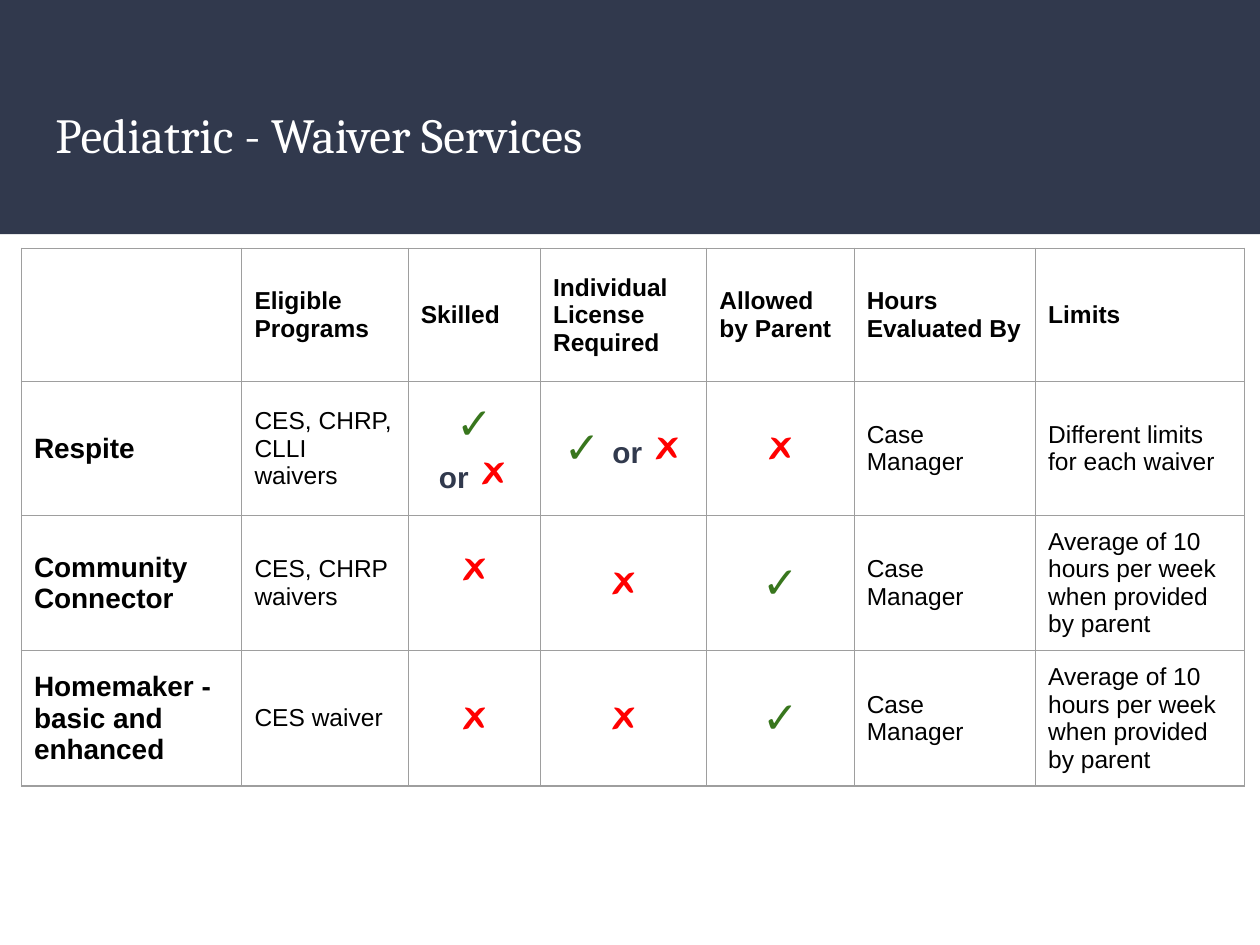
from lxml import etree
from pptx import Presentation
from pptx.dml.color import RGBColor
from pptx.enum.shapes import MSO_SHAPE
from pptx.enum.text import MSO_ANCHOR, MSO_AUTO_SIZE, PP_ALIGN
from pptx.oxml.ns import qn
from pptx.util import Inches, Pt

RECT = MSO_SHAPE.RECTANGLE
TOP, MIDDLE = MSO_ANCHOR.TOP, MSO_ANCHOR.MIDDLE
LEFT, CENTER = PP_ALIGN.LEFT, PP_ALIGN.CENTER
NO_AUTOFIT = MSO_AUTO_SIZE.NONE

NAVY = RGBColor(0x31, 0x39, 0x4D)
WHITE = RGBColor(0xFF, 0xFF, 0xFF)
BLACK = RGBColor(0, 0, 0)
GREEN = RGBColor(0x38, 0x76, 0x1D)
RED = RGBColor(0xFF, 0, 0)
GRAY = RGBColor(0x9E, 0x9E, 0x9E)

# The slide is a grid of 100 columns and 75 rows
GRID_COLS, GRID_ROWS = 100, 75
INSET = Inches(0.1)
MARGINS = {f"margin_{side}": INSET for side in ("left", "top", "right", "bottom")}

FORMATS = {
    "title": {"name": "Cambria", "size": Pt(28), "bold": False, "color": WHITE},
    "head": {"name": "Arial", "size": Pt(14), "bold": True, "color": BLACK},
    "service": {"name": "Arial", "size": Pt(16), "bold": True, "color": BLACK},
    "body": {"name": "Arial", "size": Pt(14), "bold": False, "color": BLACK},
    "yes": {"name": "Arial", "size": Pt(25), "bold": True, "color": GREEN},
    "or": {"name": "Arial", "size": Pt(17), "bold": True, "color": NAVY},
    "no": {"name": "Arial", "size": Pt(25), "bold": False, "color": RED},
}

YES = [("✓", "yes")]
NO = [("🗶", "no")]
EITHER = [("✓ ", "yes"), ("or ", "or"), ("🗶", "no")]
MANAGER = "Case Manager"
PARENT_LIMIT = "Average of 10 hours per week when provided by parent"

COL_WIDTHS = [17.5, 13.2, 10.5, 13.2, 11.7, 14.4, 16.6]
ROW_HEIGHT = 10.6
HEADERS = ["", "Eligible\nPrograms", "Skilled", "Individual License Required",
           "Allowed by Parent", "Hours Evaluated By", "Limits"]
SERVICES = [
    ["Respite", "CES, CHRP, CLLI waivers", EITHER, EITHER, NO, MANAGER,
     "Different limits for each waiver"],
    ["Community Connector", "CES, CHRP waivers", NO, NO, YES, MANAGER, PARENT_LIMIT],
    ["Homemaker - basic and enhanced", "CES waiver", NO, NO, YES, MANAGER, PARENT_LIMIT],
]


def set_attrs(target, values):
    for name, value in values.items():
        setattr(target, name, value)


class SlideBuilder:
    def __init__(self, prs):
        self.prs = prs
        self.s = prs.slides.add_slide(prs.slide_layouts[5])

    def x(self, cols):
        return round(self.prs.slide_width * cols / GRID_COLS)

    def y(self, rows):
        return round(self.prs.slide_height * rows / GRID_ROWS)

    def box(self, left, top, width, height):
        return self.x(left), self.y(top), self.x(width), self.y(height)

    def add_runs(self, p, runs, align=LEFT):
        p.alignment = align
        for text, style in runs:
            r = p.add_run()
            r.text = text
            values = dict(FORMATS[style])
            r.font.color.rgb = values.pop("color")
            set_attrs(r.font, values)

    def band(self, *place):
        """Add a plain filled bar behind everything else."""
        sp = self.s.shapes.add_shape(RECT, *self.box(*place))
        sp.shadow.inherit = False
        sp.fill.solid()
        sp.fill.fore_color.rgb = NAVY
        sp.line.fill.background()
        self.s.shapes._spTree.insert(2, sp._element)

    def title(self, text, *place):
        sp = self.s.shapes.title
        set_attrs(sp, dict(zip(("left", "top", "width", "height"), self.box(*place))))
        tf = sp.text_frame
        set_attrs(tf, {**MARGINS, "word_wrap": True, "auto_size": NO_AUTOFIT,
                       "vertical_anchor": TOP})
        self.add_runs(tf.paragraphs[0], [(text, "title")])

    def borders(self, cell):
        tc_pr = cell._tc.get_or_add_tcPr()
        for i, side in enumerate(("lnL", "lnR", "lnT", "lnB")):
            ln = etree.Element(qn(f"a:{side}"), w=str(Pt(0.75)))
            fill = etree.SubElement(ln, qn("a:solidFill"))
            etree.SubElement(fill, qn("a:srgbClr"), val=str(GRAY))
            tc_pr.insert(i, ln)

    def cell(self, cell, content, style):
        """Fill a cell with text, one paragraph a line, or with centred marks."""
        set_attrs(cell, {**MARGINS, "vertical_anchor": MIDDLE})
        cell.fill.background()
        self.borders(cell)
        tf = cell.text_frame
        if isinstance(content, list):
            self.add_runs(tf.paragraphs[0], content, CENTER)
        elif content:
            for i, line in enumerate(content.split("\n")):
                p = tf.add_paragraph() if i else tf.paragraphs[0]
                self.add_runs(p, [(line, style)])

    def table(self, left, top, rows, col_widths, row_height):
        place = self.box(left, top, sum(col_widths), row_height * len(rows))
        table = self.s.shapes.add_table(len(rows), len(col_widths), *place).table
        set_attrs(table, {"first_row": False, "horz_banding": False})
        for col, width in zip(table.columns, col_widths):
            col.width = self.x(width)
        for i, row in enumerate(rows):
            table.rows[i].height = self.y(row_height)
            for j, content in enumerate(row):
                style = "head" if i == 0 else "service" if j == 0 else "body"
                self.cell(table.cell(i, j), content, style)
        return table


def main():
    prs = Presentation()
    prs.slide_width, prs.slide_height = Inches(10), Inches(7.5)
    slide = SlideBuilder(prs)
    slide.band(0, 0, GRID_COLS, 18.6)
    slide.title("Pediatric - Waiver Services", 3.4, 7.3, 93.2, 9.1)
    table = slide.table(1.7, 19.7, [HEADERS, *SERVICES], COL_WIDTHS, ROW_HEIGHT)
    # The Community Connector mark under "Skilled" sits above the middle
    table.cell(2, 2).margin_bottom = Inches(0.32)
    prs.save("out.pptx")


if __name__ == "__main__":
    main()
